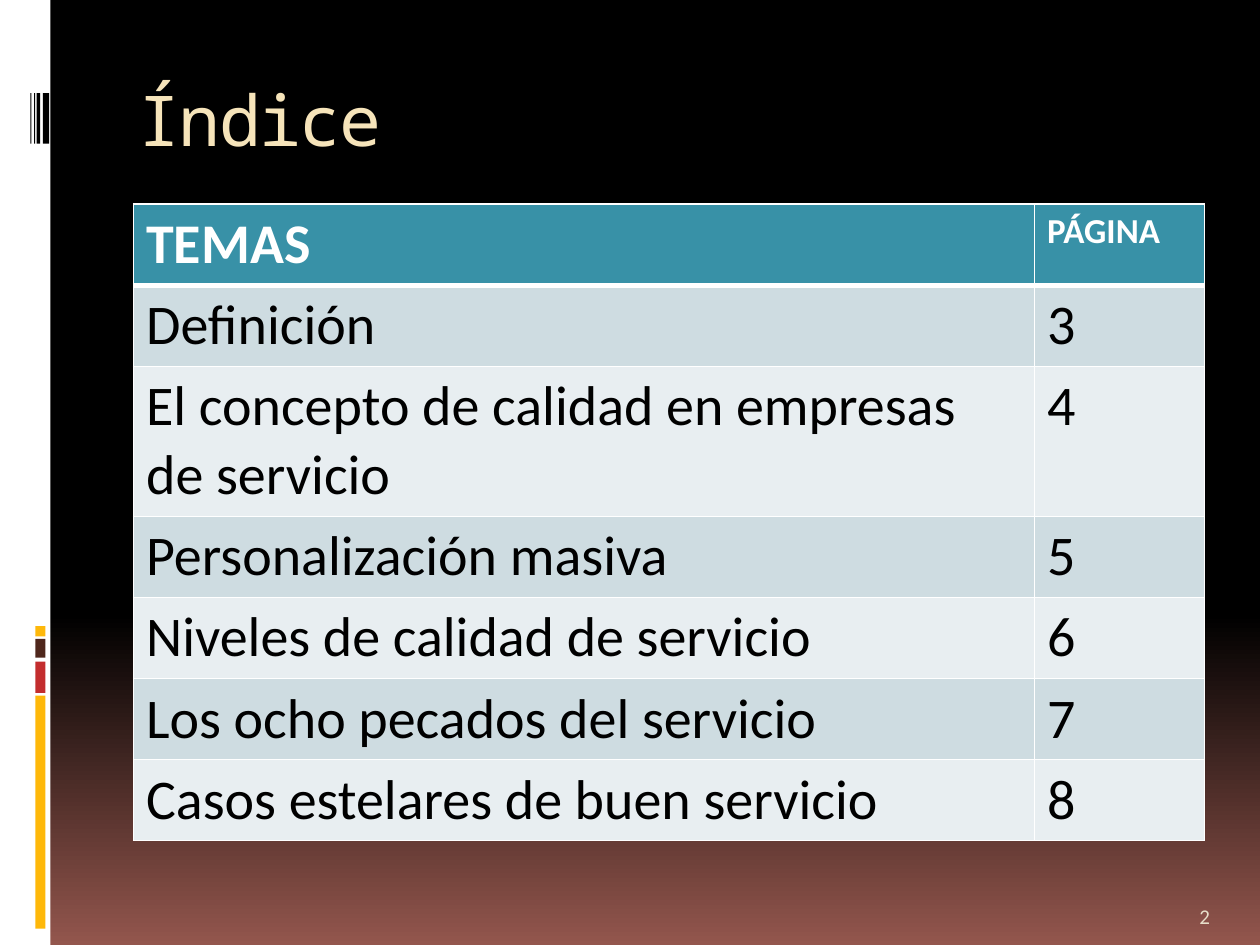
"""Build the index slide: a sidebar of colour bars, a title and a table of topics."""
from typing import NamedTuple

from lxml import etree
from pptx import Presentation
from pptx import util as u
from pptx.dml.color import RGBColor
from pptx.enum import shapes, text
from pptx.oxml import ns


class Bar(NamedTuple):
    left: float
    top: float
    width: float
    height: float
    color: str


class Topic(NamedTuple):
    name: str
    page: str
    height: float = 0.64


BARS = [
    Bar(0, 0, 0.4, 7.5, "FFFFFF"),
    Bar(0.28, 5.52, 0.08, 1.85, "FEB80A"),
    Bar(0.28, 5.25, 0.08, 0.25, "C32D2E"),
    Bar(0.28, 5.07, 0.08, 0.15, "4F271C"),
    Bar(0.28, 4.97, 0.08, 0.08, "FEB80A"),
] + [Bar(left, 0.74, width, 0.4, "000000")
     for left, width in ((0.34, 0.05), (0.29, 0.03), (0.27, 0.01), (0.24, 0.01))]

TOPICS = [
    Topic("TEMAS", "PÁGINA"),
    Topic("Definición", "3"),
    Topic("El concepto de calidad en empresas de servicio", "4", 1.19),
    Topic("Personalización masiva", "5"),
    Topic("Niveles de calidad de servicio", "6"),
    Topic("Los ocho pecados del servicio", "7"),
    Topic("Casos estelares de buen servicio", "8"),
]
COLUMNS = (7.15, 1.35)
BANDS = ("E8EEF1", "CEDCE1")


def rgb(color: str) -> RGBColor:
    return RGBColor.from_string(color)


def set_text(tf, words: str, size: float, color: str,
             font: str = "Calibri", bold: bool = False):
    tf.text = words
    p = tf.paragraphs[0]
    p.alignment = text.PP_ALIGN.LEFT
    r = p.runs[0]
    r.font.size = u.Pt(size)
    r.font.name = font
    r.font.bold = bold
    r.font.color.rgb = rgb(color)
    return r


def paint_background(s) -> None:
    fill = s.background.fill
    fill.gradient()
    fill.gradient_angle = 270
    for stop, position, color in zip(fill.gradient_stops, (0.65, 1), ("000000", "93564D")):
        stop.position = position
        stop.color.rgb = rgb(color)


def add_bar(s, bar: Bar) -> None:
    sp = s.shapes.add_shape(shapes.MSO_SHAPE.RECTANGLE, *map(u.Inches, bar[:4]))
    sp.shadow.inherit = False
    sp.fill.solid()
    sp.fill.fore_color.rgb = rgb(bar.color)
    sp.line.fill.background()


def set_borders(cell, bottom: float) -> None:
    tc_pr = cell._tc.get_or_add_tcPr()
    sides = {"lnL": 1, "lnR": 1, "lnT": 1, "lnB": bottom}
    for i, (side, width) in enumerate(sides.items()):
        ln = etree.Element(ns.qn(f"a:{side}"), w=str(u.Pt(width)))
        solid = etree.SubElement(ln, ns.qn("a:solidFill"))
        etree.SubElement(solid, ns.qn("a:srgbClr"), val="FFFFFF")
        tc_pr.insert(i, ln)


def add_topics(s, topics: list[Topic]) -> None:
    height = sum(topic.height for topic in topics)
    table = s.shapes.add_table(
        len(topics), len(COLUMNS), u.Inches(1.06), u.Inches(1.62),
        u.Inches(sum(COLUMNS)), u.Inches(height)).table
    for column, width in zip(table.columns, COLUMNS):
        column.width = u.Inches(width)
    for i, topic in enumerate(topics):
        header = i == 0
        table.rows[i].height = u.Inches(topic.height)
        for j, words in enumerate((topic.name, topic.page)):
            cell = table.cell(i, j)
            set_text(cell.text_frame, words, 20 if header and j == 1 else 32,
                     "FFFFFF" if header else "000000", bold=header)
            cell.fill.solid()
            cell.fill.fore_color.rgb = rgb("3891A7" if header else BANDS[i % 2])
            set_borders(cell, 3 if i == 0 else 1)
            if i == 1:
                top = cell._tc.tcPr.find(ns.qn("a:lnT"))
                top.set("w", str(u.Pt(3)))


def add_title(s, words: str) -> None:
    sp = s.shapes.title
    sp.left, sp.top, sp.width, sp.height = map(u.Inches, (1, 0.56, 8.5, 1))
    tf = sp.text_frame
    tf.auto_size = text.MSO_AUTO_SIZE.NONE
    tf.vertical_anchor = text.MSO_ANCHOR.TOP
    r = set_text(tf, words, 40, "F6E4BA", "Noto Sans Mono")
    r.font._element.set("spc", "-100")


def add_page_number(s, number: str) -> None:
    sp = s.shapes.add_textbox(*map(u.Inches, (9.42, 7.02, 0.5, 0.4)))
    tf = sp.text_frame
    tf.word_wrap = True
    tf.vertical_anchor = text.MSO_ANCHOR.BOTTOM
    set_text(tf, number, 12, "E7DEC9")


def main() -> None:
    prs = Presentation()
    prs.slide_width, prs.slide_height = u.Inches(10), u.Inches(7.5)
    s = prs.slides.add_slide(prs.slide_layouts[5])
    paint_background(s)
    for bar in BARS:
        add_bar(s, bar)
    add_title(s, "Índice")
    add_topics(s, TOPICS)
    add_page_number(s, "2")
    prs.save("out.pptx")


if __name__ == "__main__":
    main()
